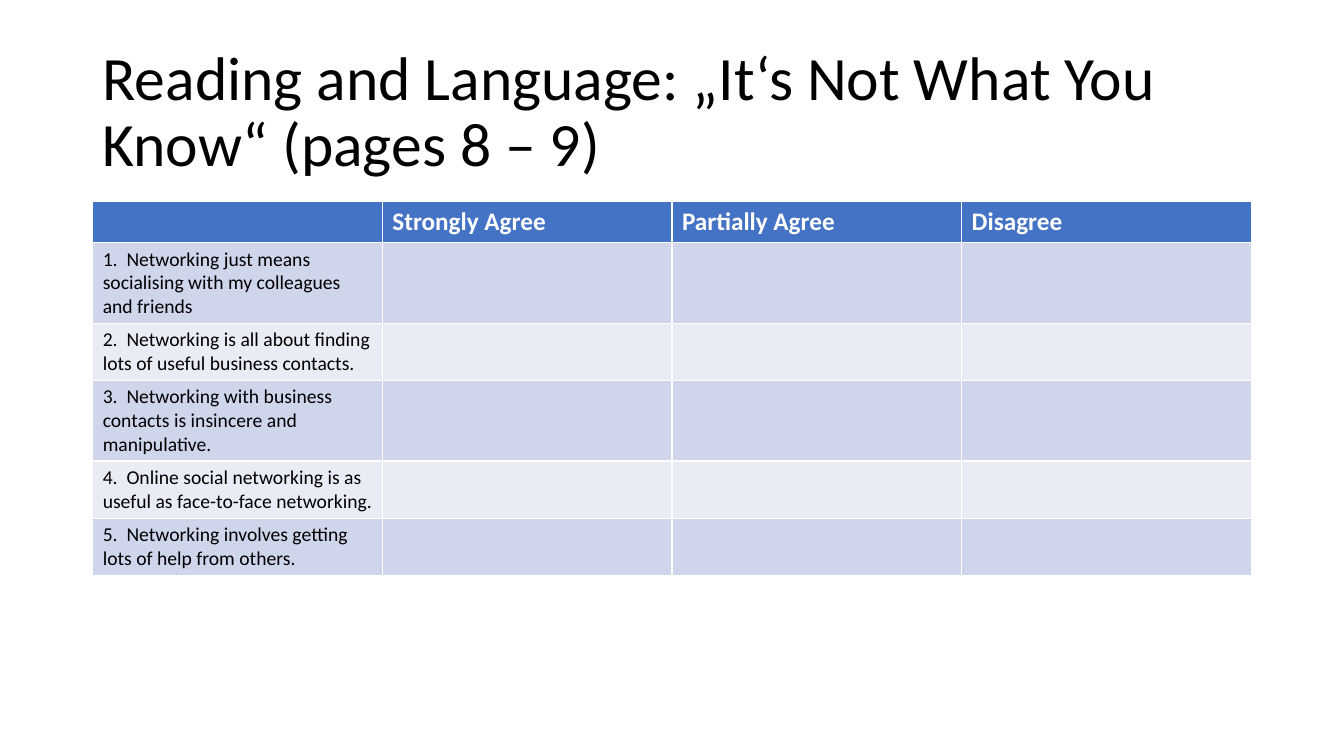
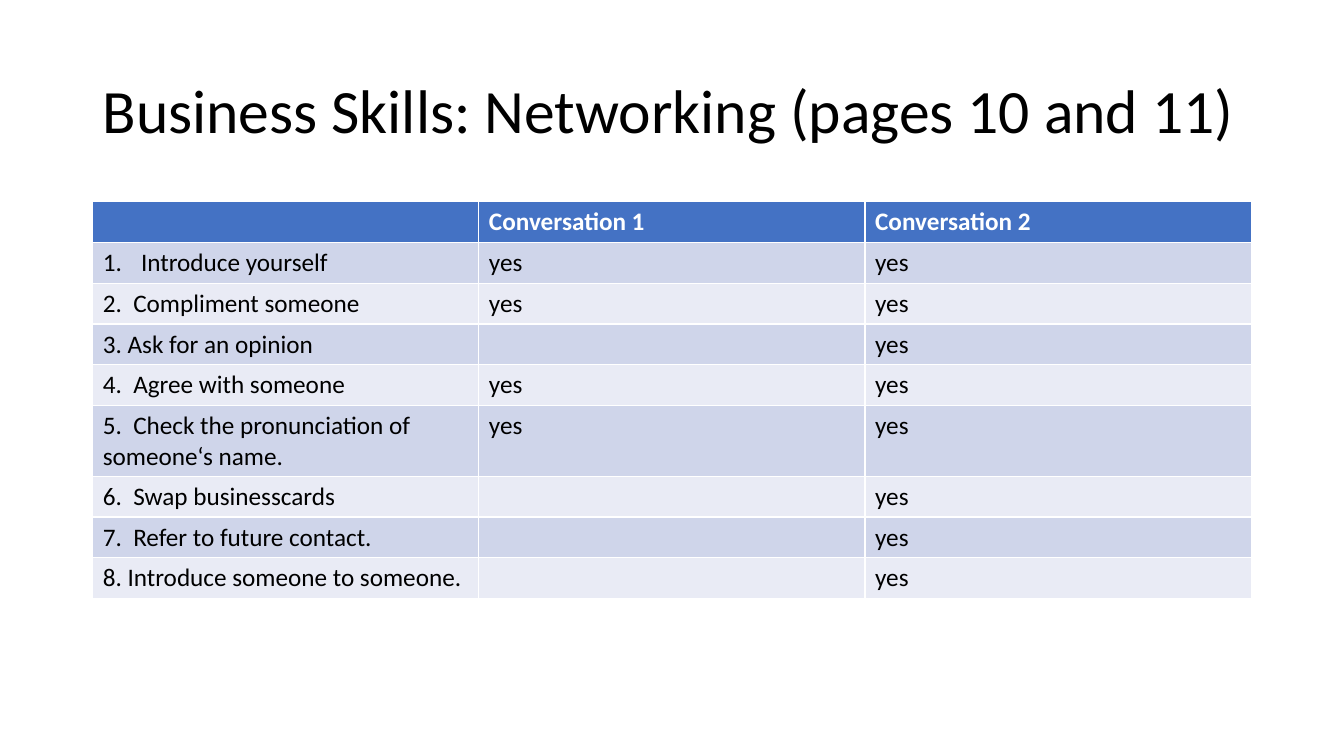
from lxml import etree
from pptx import Presentation
from pptx.dml.color import RGBColor
from pptx.enum.text import MSO_ANCHOR
from pptx.oxml.ns import qn
from pptx.util import Inches, Pt

MIDDLE = MSO_ANCHOR.MIDDLE
FONT = "Calibri"
COLORS = {
    "text": "000000",
    "head": "4472C4",
    "label": "FFFFFF",
    "odd": "CFD5EA",
    "even": "E9EBF5",
}
WIDTH, HEIGHT = Inches(13.33), Inches(7.5)
COL, ROW = WIDTH / 29, HEIGHT / 150
TITLE = (2, 8, 25, 29)
TABLE = (2, 40, 25)
LINE = 8.1

AGREE = (
    "Reading and Language: „It‘s Not What You Know“ (pages 8 – 9)",
    [
        ["", "Strongly Agree", "Partially Agree", "Disagree"],
        ["1.  Networking just means socialising with my colleagues and friends"],
        ["2.  Networking is all about finding lots of useful business contacts."],
        ["3.  Networking with business contacts is insincere and manipulative."],
        ["4.  Online social networking is as useful as face-to-face networking."],
        ["5.  Networking involves getting lots of help from others."],
    ],
    14,
)
SKILLS = (
    "Business Skills: Networking (pages 10 and 11)",
    [
        ["", "Conversation 1", "Conversation 2"],
        ["Introduce yourself", "yes", "yes"],
        ["2.  Compliment someone", "yes", "yes"],
        ["3. Ask for an opinion", "", "yes"],
        ["4.  Agree with someone", "yes", "yes"],
        ["5.  Check the pronunciation of someone‘s name.", "yes", "yes"],
        ["6.  Swap businesscards", "", "yes"],
        ["7.  Refer to future contact.", "", "yes"],
        ["8. Introduce someone to someone.", "", "yes"],
    ],
    18,
)


def color(name):
    return RGBColor.from_string(COLORS[name])


def style(para, size, tint, bold=False):
    font = para.font
    font.name, font.size, font.bold = FONT, Pt(size), bold
    font.color.rgb = color(tint)


def number(para):
    props = para._p.get_or_add_pPr()
    props.set("marL", str(Inches(0.38)))
    props.set("indent", str(-Inches(0.38)))
    mark = etree.Element(qn("a:buAutoNum"), type="arabicPeriod")
    props.insert(0, mark)


def add_title(slide, text, box):
    left, top, wide, high = box
    frame = slide.shapes.add_textbox(
        int(left * COL), int(top * ROW), int(wide * COL), int(high * ROW)
    ).text_frame
    frame.word_wrap = True
    frame.vertical_anchor = MIDDLE
    para = frame.paragraphs[0]
    para.text = text
    para.line_spacing = 0.9
    style(para, 44, "text")


def add_grid(slide, rows, size, box):
    left, top, wide = box
    count = len(rows[0])
    table = slide.shapes.add_table(
        len(rows), count, int(left * COL), int(top * ROW),
        int(wide * COL), int(len(rows) * LINE * ROW)
    ).table
    for r, row in enumerate(rows):
        fill = "head" if r == 0 else "odd" if r % 2 else "even"
        for c in range(count):
            cell = table.cell(r, c)
            cell.fill.solid()
            cell.fill.fore_color.rgb = color(fill)
            if c < len(row) and row[c]:
                para = cell.text_frame.paragraphs[0]
                para.text = row[c]
                if r == 0:
                    style(para, 18, "label", True)
                else:
                    style(para, size, "text")
    return table


def add_page(deck, title, rows, size):
    slide = deck.slides.add_slide(deck.slide_layouts[6])
    add_title(slide, title, TITLE)
    return add_grid(slide, rows, size, TABLE)


def main():
    deck = Presentation()
    deck.slide_width, deck.slide_height = WIDTH, HEIGHT
    add_page(deck, *AGREE)
    skills = add_page(deck, *SKILLS)
    number(skills.cell(1, 0).text_frame.paragraphs[0])
    deck.save("out.pptx")


if __name__ == "__main__":
    main()
